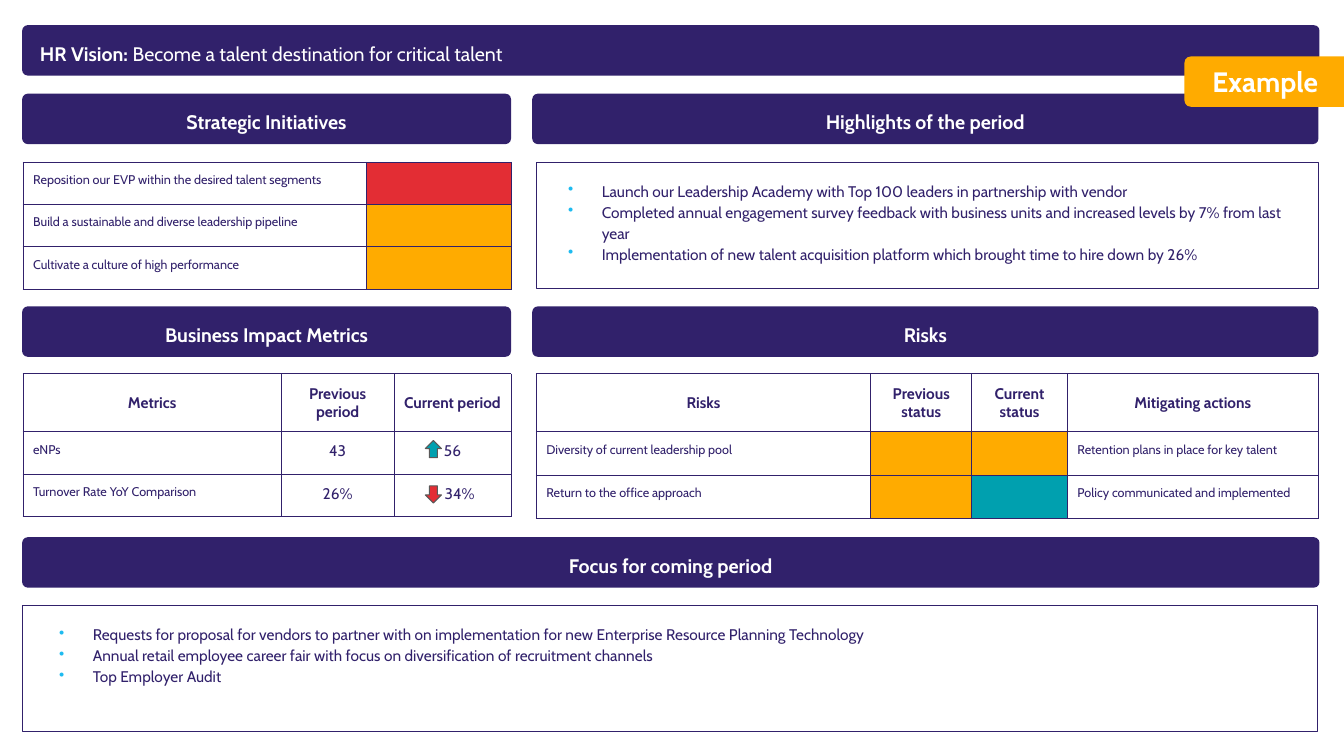
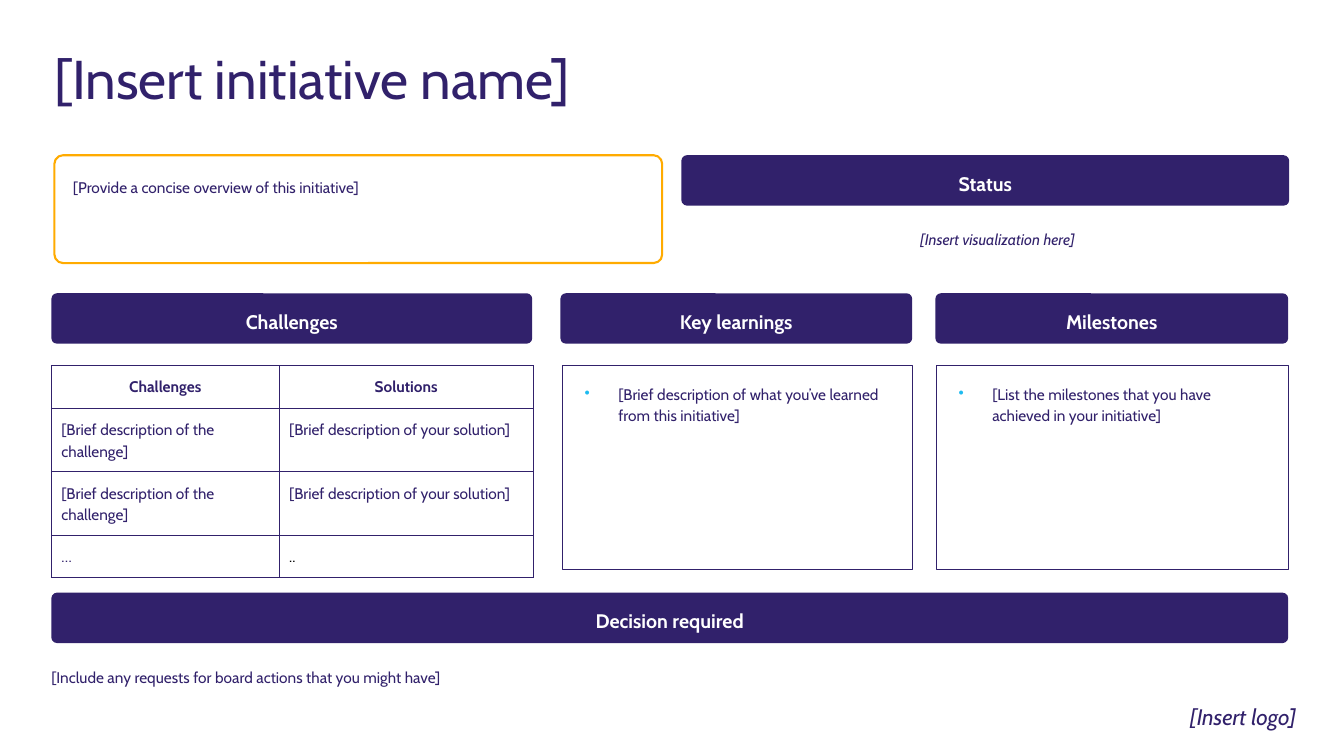
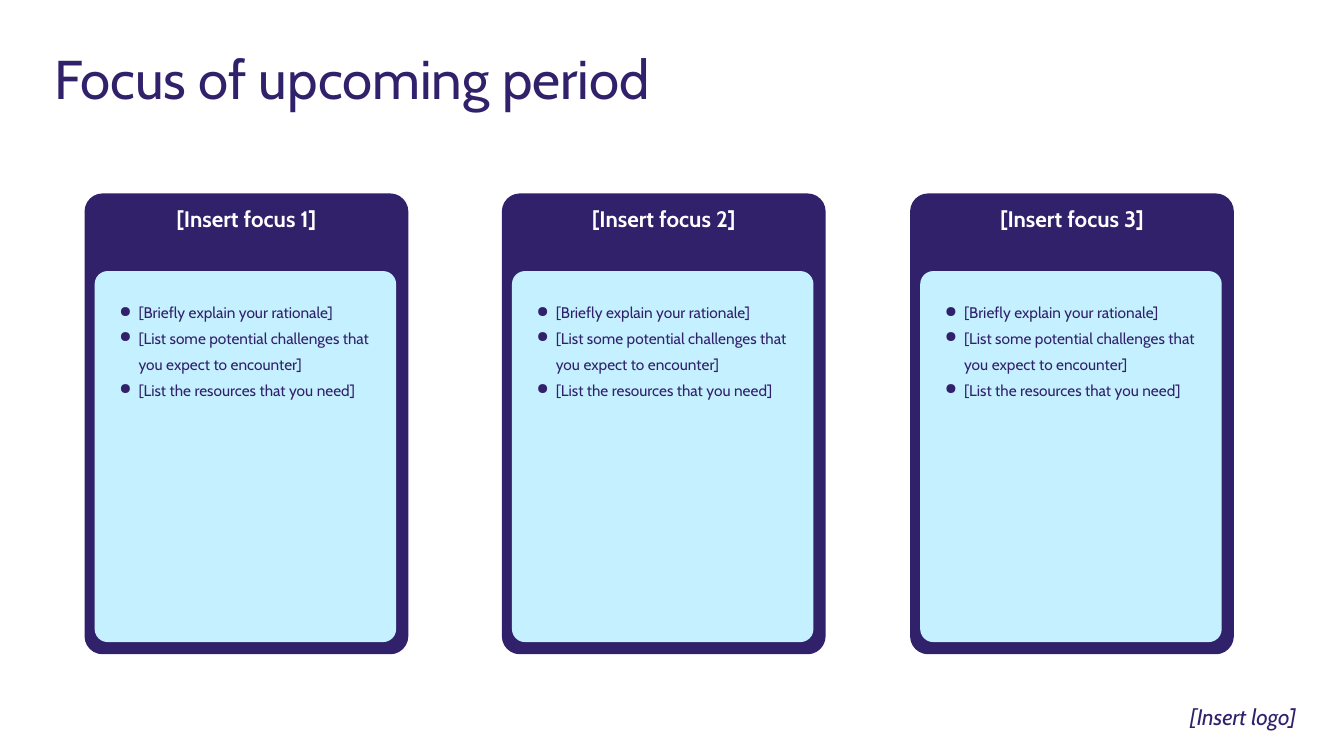
import pptx
import pptx.dml.color
import pptx.enum.shapes
import pptx.enum.text
import pptx.oxml
import pptx.oxml.ns
import pptx.util

SHAPE = pptx.enum.shapes.MSO_SHAPE
ALIGN = pptx.enum.text.PP_ALIGN
ANCHOR = pptx.enum.text.MSO_ANCHOR
COLOURS = {
    "navy": "31216B", "white": "FFFFFF", "black": "000000", "red": "E32D34",
    "amber": "FFAB00", "teal": "00A0AF", "sky": "1EBBF0", "ice": "C5F0FF",
    "grey": "595959",
}


class Board:
    """Draws styled elements on the current page, placed on a grid of 160 columns by 90 rows."""

    FONT = "Cabin"
    COLUMNS, ROWS = 160, 90
    BAND_HEIGHT = 6
    DOT = ("•", "sky", 36, -24)
    DISC = ("●", "navy", 13.7, -18.7)

    def __init__(self):
        self.deck = pptx.Presentation()
        self.deck.slide_width = pptx.util.Inches(13.33)
        self.deck.slide_height = pptx.util.Inches(7.5)
        self.page = None

    def new_page(self):
        self.page = self.deck.slides.add_slide(self.deck.slide_layouts[6])

    def across(self, columns):
        return round(self.deck.slide_width * columns / self.COLUMNS)

    def down(self, rows):
        return round(self.deck.slide_height * rows / self.ROWS)

    def place(self, left, top, width, height):
        return self.across(left), self.down(top), self.across(width), self.down(height)

    def colour(self, name):
        return pptx.dml.color.RGBColor.from_string(COLOURS[name])

    def style_font(self, font, size, colour, bold=False, italic=False):
        font.name = self.FONT
        font.size = pptx.util.Pt(size)
        font.color.rgb = self.colour(colour)
        font.bold = bold
        font.italic = italic

    def add_bullet(self, para, mark, colour, margin, indent):
        properties = para._p.get_or_add_pPr()
        properties.set("marL", str(pptx.util.Pt(margin)))
        properties.set("indent", str(pptx.util.Pt(indent)))
        space = pptx.oxml.ns.nsdecls("a")
        for xml in (f'<a:buClr {space}><a:srgbClr val="{COLOURS[colour]}"/></a:buClr>',
                    f'<a:buChar {space} char="{mark}"/>'):
            properties.append(pptx.oxml.parse_xml(xml))

    def fill_text(self, frame, lines, size=11, colour="navy", bold=False, italic=False,
                  align=ALIGN.LEFT, spacing=1.14, bullet=None):
        frame.word_wrap = True
        for index, line in enumerate(lines):
            para = frame.add_paragraph() if index else frame.paragraphs[0]
            para.alignment = align
            para.line_spacing = spacing
            if bullet:
                self.add_bullet(para, *bullet)
            self.style_font(para.font, size, colour, bold, italic)
            para.add_run().text = line

    def pad(self, frame, left=0, top=0, right=0, bottom=0, anchor=ANCHOR.TOP):
        frame.margin_left, frame.margin_right = self.across(left), self.across(right)
        frame.margin_top, frame.margin_bottom = self.down(top), self.down(bottom)
        frame.vertical_anchor = anchor

    def box(self, kind, area, fill=None, line=None, weight=0.75, corner=None):
        box = self.page.shapes.add_shape(kind, *self.place(*area))
        box.shadow.inherit = False
        if fill:
            box.fill.solid()
            box.fill.fore_color.rgb = self.colour(fill)
        else:
            box.fill.background()
        if line:
            box.line.color.rgb = self.colour(line)
            box.line.width = pptx.util.Pt(weight)
        else:
            box.line.fill.background()
        if corner:
            box.adjustments[0] = corner
        return box

    def text(self, area, line, **style):
        frame = self.page.shapes.add_textbox(*self.place(*area)).text_frame
        self.pad(frame)
        self.fill_text(frame, [line], **style)

    def title(self, line):
        self.text((6.48, 6.24, 147.24, 7.92), line, size=39, spacing=0.9)

    def logo_note(self):
        self.text((139.56, 84.12, 16.8, 3.48), "[Insert logo]", size=16, italic=True,
                  align=ALIGN.CENTER, spacing=0.9)

    def band(self, left, top, width, line, align=ALIGN.CENTER, bold=True, indent=0):
        area = (left, top, width, self.BAND_HEIGHT)
        frame = self.box(SHAPE.ROUNDED_RECTANGLE, area, "navy", corner=0.11).text_frame
        self.pad(frame, left=indent, top=0.36, anchor=ANCHOR.MIDDLE)
        self.fill_text(frame, [line], size=14, colour="white", bold=bold, align=align)
        return frame.paragraphs[0]

    def panel(self, area, lines, left, right):
        frame = self.box(SHAPE.RECTANGLE, area, line="navy").text_frame
        self.pad(frame, left=left, top=2, right=right)
        self.fill_text(frame, lines, bullet=self.DOT)

    def card(self, left, heading, lines):
        outer = self.box(SHAPE.ROUNDED_RECTANGLE, (left, 23.28, 38.04, 54.36),
                         "navy", "navy", 3, 0.05)
        self.pad(outer.text_frame, 1.2, 0.6, 1.2, 0.6)
        self.fill_text(outer.text_frame, [heading], size=16, colour="white", bold=True,
                       align=ALIGN.CENTER, spacing=1.0)
        inner = self.box(SHAPE.ROUNDED_RECTANGLE, (left + 1.08, 32.4, 35.64, 43.92),
                         "ice", "ice", 1.5, 0.04)
        self.pad(inner.text_frame, 2.4, 2.4, 2.4, 2.4)
        self.fill_text(inner.text_frame, lines, spacing=1.4, bullet=self.DISC)

    def arrow(self, top, fill, rotation=0):
        arrow = self.box(SHAPE.UP_ARROW, (50.64, top, 1.92, 2.04), fill, "grey")
        arrow.rotation = rotation

    def add_borders(self, cell):
        properties = cell._tc.get_or_add_tcPr()
        for side in ("lnL", "lnR", "lnT", "lnB"):
            properties.append(pptx.oxml.parse_xml(
                f'<a:{side} {pptx.oxml.ns.nsdecls("a")} w="{pptx.util.Pt(0.75)}"><a:solidFill>'
                f'<a:srgbClr val="{COLOURS["navy"]}"/></a:solidFill></a:{side}>'))

    def table(self, left, top, widths, heights, lines, styles, header=True, fills=None):
        area = self.place(left, top, sum(widths), sum(heights))
        table = self.page.shapes.add_table(len(heights), len(widths), *area).table
        table.first_row = table.horz_banding = False
        for column, width in zip(table.columns, widths):
            column.width = self.across(width)
        for row, height in zip(table.rows, heights):
            row.height = self.down(height)
        for row, line in enumerate(lines):
            for column, words in enumerate(line):
                cell = table.cell(row, column)
                self.add_borders(cell)
                cell.fill.solid()
                cell.fill.fore_color.rgb = self.colour((fills or {}).get((row, column), "white"))
                heading = header and row == 0
                anchor = ANCHOR.MIDDLE if heading else ANCHOR.TOP
                self.pad(cell, *([1.2] * 4 if words else [0] * 4), anchor=anchor)
                style = HEADING if heading else styles[column]
                if words:
                    self.fill_text(cell.text_frame, [words], **style)
        return table


HEADING = {"bold": True, "align": ALIGN.CENTER, "spacing": 1.0}
NOTE = {"size": 9, "spacing": 1.0}
FIGURE = {"align": ALIGN.CENTER, "spacing": 1.0}
BODY = {"spacing": 1.14}


def draw_overview(board):
    board.new_page()
    left, right, full = 2.64, 63.36, 154.44
    narrow, wide = 58.2, 93.6
    vision = board.band(left, 3, full, "HR Vision: ", ALIGN.LEFT, False, 1.92)
    vision.runs[0].font.bold = True
    vision.add_run().text = "Become a talent destination for critical talent"
    for top, first, second in ((11.16, "Strategic Initiatives", "Highlights of the period"),
                               (36.48, "Business Impact Metrics", "Risks")):
        board.band(left, top, narrow, first)
        board.band(right, top, wide, second)
    board.band(left, 63.96, full, "Focus for coming period")

    board.table(2.76, 19.32, [40.92, 17.16], [5.04] * 3, [
        ["Reposition our EVP within the desired talent segments", ""],
        ["Build a sustainable and diverse leadership pipeline", ""],
        ["Cultivate a culture of high performance", ""],
    ], [NOTE, NOTE], header=False, fills={(0, 1): "red", (1, 1): "amber", (2, 1): "amber"})
    board.panel((63.84, 19.32, 93.12, 15), [
        "Launch our Leadership Academy with Top 100 leaders in partnership with vendor",
        "Completed annual engagement survey feedback with business units and increased "
        "levels by 7% from last year",
        "Implementation of new talent acquisition platform which brought time to hire "
        "down by 26%",
    ], 1.8, 2)
    metrics = board.table(2.76, 44.52, [30.72, 13.44, 13.92], [6.9, 5.04, 5.04], [
        ["Metrics", "Previous period", "Current period"],
        ["eNPs", "43", "56"],
        ["Turnover Rate YoY Comparison", "26%", "34%"],
    ], [NOTE, FIGURE, FIGURE])
    metrics.cell(2, 2).margin_left = board.across(2.88)
    board.table(63.84, 44.52, [39.84, 12, 11.4, 29.88], [6.9, 5.16, 5.16], [
        ["Risks", "Previous status", "Current status", "Mitigating actions"],
        ["Diversity of current leadership pool", "", "",
         "Retention plans in place for key talent"],
        ["Return to the office approach", "", "", "Policy communicated and implemented"],
    ], [NOTE] * 4, fills={(1, 1): "amber", (1, 2): "amber", (2, 1): "amber", (2, 2): "teal"})
    board.panel((left, 72.12, 154.2, 15), [
        "Requests for proposal for vendors to partner with on implementation for new "
        "Enterprise Resource Planning Technology",
        "Annual retail employee career fair with focus on diversification of recruitment "
        "channels",
        "Top Employer Audit",
    ], 2.4, 2.5)
    tag = board.box(SHAPE.ROUNDED_RECTANGLE, (141, 6.72, 20.28, 6), "amber", corner=0.13)
    board.pad(tag.text_frame, left=3.12, anchor=ANCHOR.MIDDLE)
    board.fill_text(tag.text_frame, ["Example"], size=20, colour="white", bold=True, spacing=1.0)
    board.arrow(52.44, "teal")
    board.arrow(57.84, "red", 180)


def draw_initiative(board):
    board.new_page()
    left, full, half = 6.12, 147.24, 72.36
    board.title("[Insert initiative name]")
    overview = board.box(SHAPE.ROUNDED_RECTANGLE, (6.48, 18.48, half, 12.84),
                         "white", "amber", 1.5, 0.08)
    board.pad(overview.text_frame, left=1.92, top=2.16, right=2)
    board.fill_text(overview.text_frame, ["[Provide a concise overview of this initiative]"])
    for start, top, width, heading in (
            (81.12, 18.48, half, "Status"), (left, 34.92, 57.24, "Challenges"),
            (66.72, 34.92, 41.88, "Key learnings"), (111.36, 34.92, 42, "Milestones"),
            (left, 70.56, full, "Decision required")):
        board.band(start, top, width, heading)
    board.text((105.96, 27.12, 25.56, 2.16), "[Insert visualization here]", italic=True,
               align=ALIGN.CENTER)
    pair = ["[Brief description of the challenge]", "[Brief description of your solution]"]
    table = board.table(left, 43.56, [27.12, 30.24], [5.04, 7.56, 7.56, 5.04],
                        [["Challenges", "Solutions"], pair, pair, ["…", ".."]], [BODY, BODY])
    table.cell(3, 1).text_frame.paragraphs[0].font.color.rgb = board.colour("black")
    for start, width, line in (
            (66.96, 41.64, "[Brief description of what you’ve learned from this initiative]"),
            (111.48, 41.88, "[List the milestones that you have achieved in your initiative]")):
        board.panel((start, 43.56, width, 24.24), [line], 0.65, 2.76)
    board.text((left, 79.2, full, 7.8),
               "[Include any requests for board actions that you might have]")
    board.logo_note()


def draw_focus(board):
    board.new_page()
    board.title("Focus of upcoming period")
    for number, left in enumerate((10.32, 60, 108.6), 1):
        board.card(left, f"[Insert focus {number}]", [
            "[Briefly explain your rationale]",
            "[List some potential challenges that you expect to encounter]",
            "[List the resources that you need]",
        ])
    board.logo_note()


def main():
    board = Board()
    draw_overview(board)
    draw_initiative(board)
    draw_focus(board)
    board.deck.save("out.pptx")


if __name__ == "__main__":
    main()
